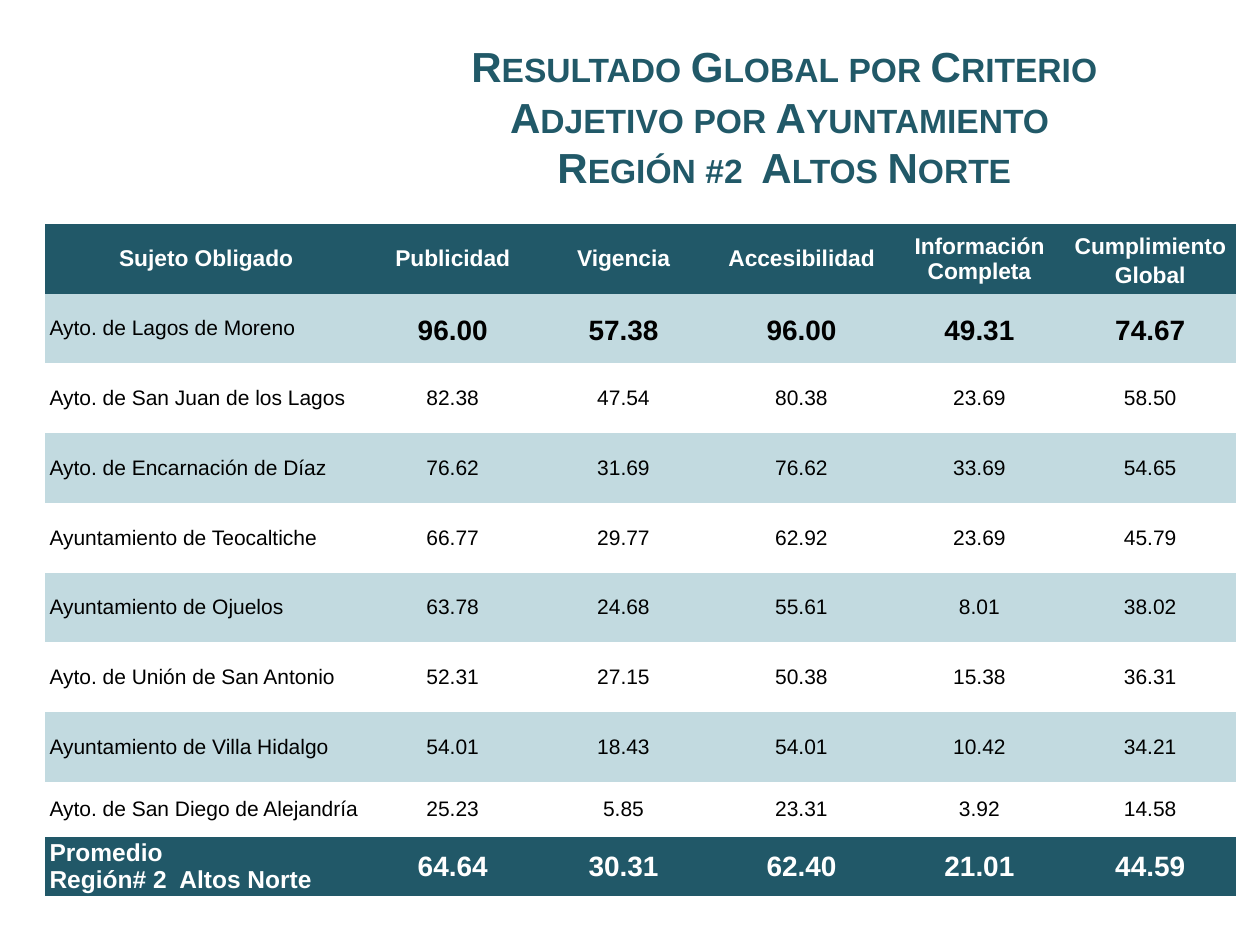
from pptx import Presentation
from pptx.dml.color import RGBColor
from pptx.enum.text import MSO_ANCHOR, PP_ALIGN
from pptx.util import Pt

CENTER, LEFT = PP_ALIGN.CENTER, PP_ALIGN.LEFT
MIDDLE = MSO_ANCHOR.MIDDLE
FONT = "Arial"
PLAIN_TABLE_STYLE = "{2D5ABB26-0587-4C30-8999-92F81FD0307C}"
COLORS = {
    "title": "215968",
    "dark": "215868",
    "band": "C2DAE0",
    "black": "000000",
    "white": "FFFFFF",
}

TITLE = ("Resultado Global por Criterio Adjetivo por Ayuntamiento \v"
         "Región #2  Altos Norte")
COLUMN_WIDTHS = [184.3, 97.6, 97.6, 105.8, 97.6, 97.6]
ROW_HEIGHTS = [39.84] * 8 + [31.75] * 2
ROWS = [
    ["Sujeto Obligado", "Publicidad", "Vigencia", "Accesibilidad",
     "Información\vCompleta", "Cumplimiento Global"],
    ["Ayto. de Lagos de Moreno", "96.00", "57.38", "96.00", "49.31", "74.67"],
    ["Ayto. de San Juan de los Lagos", "82.38", "47.54", "80.38", "23.69", "58.50"],
    ["Ayto. de Encarnación de Díaz", "76.62", "31.69", "76.62", "33.69", "54.65"],
    ["Ayuntamiento de Teocaltiche", "66.77", "29.77", "62.92", "23.69", "45.79"],
    ["Ayuntamiento de Ojuelos", "63.78", "24.68", "55.61", "8.01", "38.02"],
    ["Ayto. de Unión de San Antonio", "52.31", "27.15", "50.38", "15.38", "36.31"],
    ["Ayuntamiento de Villa Hidalgo", "54.01", "18.43", "54.01", "10.42", "34.21"],
    ["Ayto. de San Diego de Alejandría", "25.23", "5.85", "23.31", "3.92", "14.58"],
    ["Promedio\nRegión# 2  Altos Norte", "64.64", "30.31", "62.40", "21.01", "44.59"],
]
HEADER, LEADER, AVERAGE = 0, 1, len(ROWS) - 1
LAST_COLUMN = len(COLUMN_WIDTHS) - 1


def color(name):
    return RGBColor.from_string(COLORS[name])


def format_text(frame, size, color_name, bold, align, spacing=None):
    for para in frame.paragraphs:
        para.alignment = align
        if spacing:
            para.line_spacing = spacing
        for span in para.runs:
            span.font.name = FONT
            span.font.size = Pt(size)
            span.font.bold = bold
            span.font.color.rgb = color(color_name)


def add_title(page):
    box = page.shapes.add_textbox(Pt(212.4), Pt(21.6), Pt(471.6), Pt(90))
    frame = box.text_frame
    frame.word_wrap = True
    frame.vertical_anchor = MIDDLE
    frame.text = TITLE
    format_text(frame, 24, "title", True, CENTER)
    for span in frame.paragraphs[0].runs:
        span.font.language_id = None
        span._r.get_or_add_rPr().set("cap", "small")


def cell_style(row, column):
    """Return size, bold and line spacing for a table cell."""
    if row == HEADER:
        return 13, True, 1.15 if column == LAST_COLUMN else None
    if row == LEADER and column > 0:
        return 16, True, 1.15
    if row == AVERAGE:
        return (16 if column else 14), True, None
    return 12, False, None


def fill_cell(cell, row, column):
    cell.margin_left = cell.margin_right = Pt(2.7)
    cell.margin_top = cell.margin_bottom = Pt(0)
    cell.vertical_anchor = MIDDLE
    is_dark = row in (HEADER, AVERAGE)
    if is_dark or row % 2:
        cell.fill.solid()
        cell.fill.fore_color.rgb = color("dark" if is_dark else "band")
    else:
        cell.fill.background()

    cell.text_frame.text = ROWS[row][column]
    size, bold, spacing = cell_style(row, column)
    align = LEFT if column == 0 and row != HEADER else CENTER
    format_text(cell.text_frame, size, "white" if is_dark else "black",
                bold, align, spacing)


def add_results_table(page):
    frame = page.shapes.add_table(
        len(ROWS), len(COLUMN_WIDTHS), Pt(25.6), Pt(128),
        Pt(sum(COLUMN_WIDTHS)), Pt(sum(ROW_HEIGHTS)))
    table = frame.table
    table.horz_banding = False
    table._tbl.tblPr[0].text = PLAIN_TABLE_STYLE
    for column, width in zip(table.columns, COLUMN_WIDTHS):
        column.width = Pt(width)
    for row, height in zip(table.rows, ROW_HEIGHTS):
        row.height = Pt(height)
    for row in range(len(ROWS)):
        for column in range(len(COLUMN_WIDTHS)):
            fill_cell(table.cell(row, column), row, column)


def main():
    deck = Presentation()
    deck.slide_width, deck.slide_height = Pt(720), Pt(540)
    page = deck.slides.add_slide(deck.slide_layouts[6])
    add_title(page)
    add_results_table(page)
    deck.save("out.pptx")


if __name__ == "__main__":
    main()
